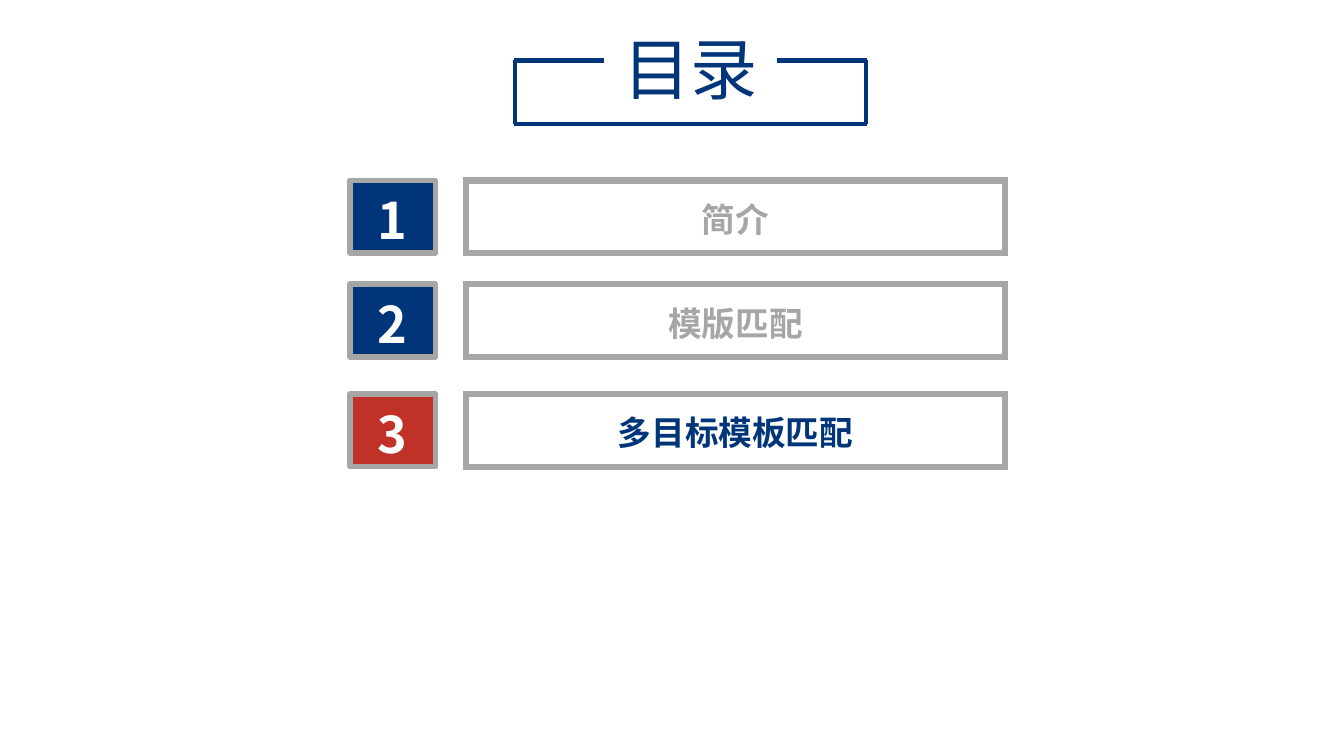
import pptx
import pptx.util
import pptx.dml.color
import pptx.enum.shapes
import pptx.enum.text
import pptx.oxml
import pptx.oxml.ns
from pptx.util import Inches

FONT = "Noto Sans CJK SC"
NAVY, RED, GRAY, WHITE = "003679", "C03228", "A6A6A6", "FFFFFF"
RECTANGLE = pptx.enum.shapes.MSO_SHAPE.RECTANGLE
STRAIGHT = pptx.enum.shapes.MSO_CONNECTOR.STRAIGHT


def rgb(value):
    return pptx.dml.color.RGBColor.from_string(value)


def write(box, text, size, color, bold=False, spacing=1.0):
    frame = box.text_frame
    frame.word_wrap = True
    frame.margin_top = frame.margin_bottom = 0
    frame.vertical_anchor = pptx.enum.text.MSO_ANCHOR.MIDDLE
    para = frame.paragraphs[0]
    para.alignment = pptx.enum.text.PP_ALIGN.CENTER
    para.line_spacing = spacing
    span = para.add_run()
    span.text = text
    span.font.name = FONT
    span.font.size = pptx.util.Pt(size)
    span.font.bold = bold
    span.font.color.rgb = rgb(color)
    # Chinese characters take the East Asian font
    east_asian = pptx.oxml.parse_xml(
        f'<a:ea {pptx.oxml.ns.nsdecls("a")} typeface="{FONT}"/>')
    span.font._element.append(east_asian)


deck = pptx.Presentation()
deck.slide_width, deck.slide_height = Inches(13.33), Inches(7.5)
page = deck.slides.add_slide(deck.slide_layouts[6])

# Title
title = page.shapes.add_textbox(Inches(5.83), Inches(0.22), Inches(2.04), Inches(0.91))
write(title, "目录", 48, NAVY)

# Open frame around the title
frame_lines = [
    (7.71, 0.6, 8.6, 0.6),
    (5.1, 0.6, 5.99, 0.6),
    (5.1, 1.23, 8.6, 1.23),
    (5.11, 0.6, 5.11, 1.23),
    (8.59, 0.6, 8.59, 1.23),
]
for ends in frame_lines:
    edge = page.shapes.add_connector(STRAIGHT, *[Inches(value) for value in ends])
    edge.line.color.rgb = rgb(NAVY)
    edge.line.width = pptx.util.Pt(3)
    edge._element.spPr.append(
        pptx.oxml.parse_xml(f'<a:effectLst {pptx.oxml.ns.nsdecls("a")}/>'))

# Contents: a numbered box and a framed label in each row
rows = [
    (1.79, "简介", NAVY, GRAY),
    (2.82, "模版匹配", NAVY, GRAY),
    (3.91, "多目标模板匹配", RED, NAVY),
]
for number, (top, label, number_fill, label_color) in enumerate(rows, 1):
    number_box = page.shapes.add_shape(
        RECTANGLE, Inches(3.47), Inches(top), Inches(0.85), Inches(0.72))
    number_box.fill.solid()
    number_box.fill.fore_color.rgb = rgb(number_fill)
    write(number_box, str(number), 36, WHITE, True, 1.1)

    label_box = page.shapes.add_shape(
        RECTANGLE, Inches(4.62), Inches(top), Inches(5.35), Inches(0.72))
    label_box.fill.background()
    write(label_box, label, 24, label_color, True, 1.1)

    for box, width, join in ((number_box, 4, "round"), (label_box, 4.5, "miter")):
        box.shadow.inherit = False
        box.line.color.rgb = rgb(GRAY)
        box.line.width = pptx.util.Pt(width)
        box.line._ln.append(
            pptx.oxml.parse_xml(f'<a:{join} {pptx.oxml.ns.nsdecls("a")}/>'))

deck.save("out.pptx")
